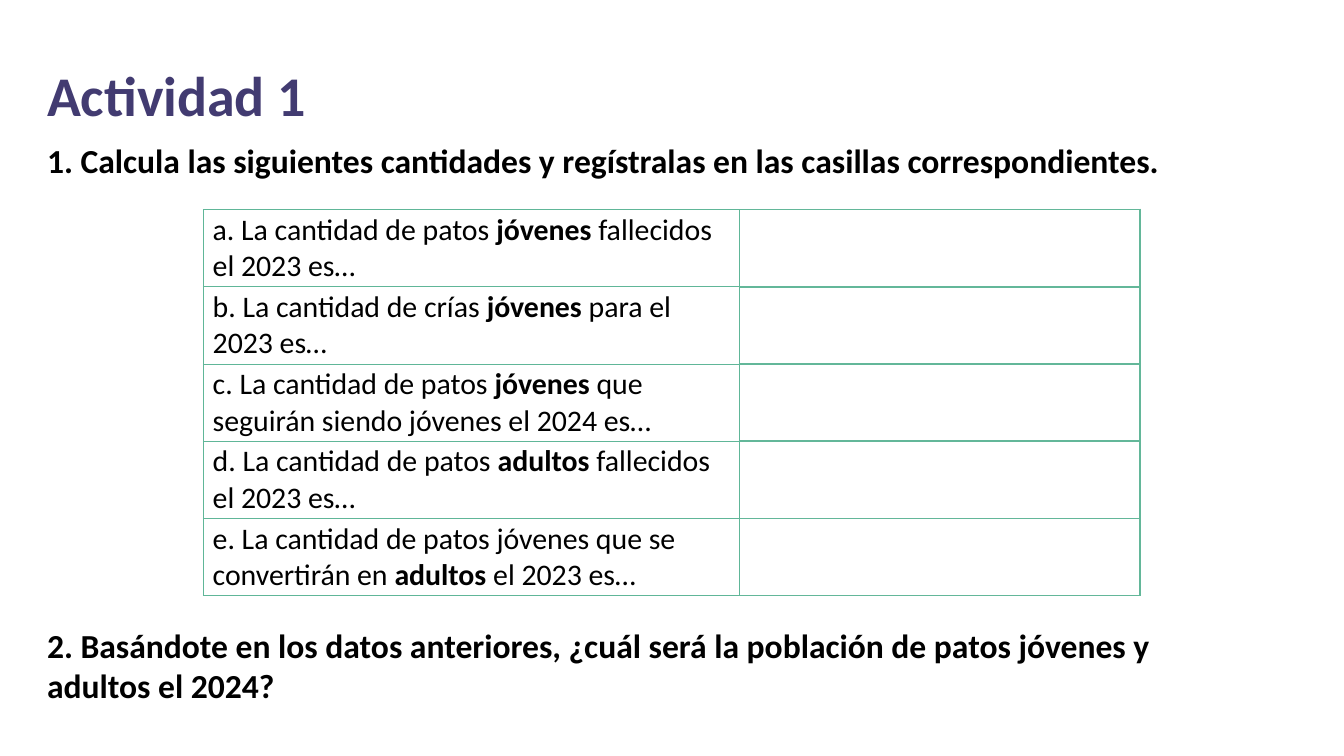
from typing import NamedTuple

from lxml import etree
from pptx import Presentation
from pptx import util as u
from pptx.dml.color import RGBColor
from pptx.enum import text
from pptx.oxml.ns import qn

FONT = "Calibri"
BLACK = RGBColor(0x00, 0x00, 0x00)
PURPLE = RGBColor(0x42, 0x3B, 0x71)
GREEN = RGBColor(0x60, 0xB6, 0x98)
ANSWER_GREEN = RGBColor(0x63, 0xB7, 0x99)

LEFT = u.Cm(0.64)
INSET = u.Cm(0.25)
CELL_INSET = u.Cm(0.18)
COLUMN_WIDTHS = (u.Cm(10.13), u.Cm(7.57))
ROW_HEIGHT = u.Cm(1.46)


class Question(NamedTuple):
    start: str
    emphasis: str
    end: str


class Instruction(NamedTuple):
    wording: str
    top: u.Length
    width: u.Length
    height: u.Length


class Border(NamedTuple):
    side: str
    color: RGBColor
    width: u.Length


QUESTIONS = (
    Question("a. La cantidad de patos ", "jóvenes ", "fallecidos el 2023 es…"),
    Question("b. La cantidad de crías ", "jóvenes ", "para el 2023 es…"),
    Question("c. La cantidad de patos ", "jóvenes ", "que seguirán siendo jóvenes el 2024 es…"),
    Question("d. La cantidad de patos ", "adultos ", "fallecidos el 2023 es…"),
    Question("e. La cantidad de patos jóvenes que se convertirán en ", "adultos ", "el 2023 es…"),
)
INSTRUCTIONS = (
    Instruction(
        "1. Calcula las siguientes cantidades y regístralas en las casillas correspondientes.",
        u.Cm(2.39), u.Cm(21.62), u.Cm(1.27),
    ),
    Instruction(
        "2. Basándote en los datos anteriores, ¿cuál será la población de patos jóvenes "
        "y adultos el 2024?",
        u.Cm(11.56), u.Cm(22.68), u.Cm(2.06),
    ),
)
# Sides follow the order that the cell properties require.
QUESTION_BORDERS = tuple(Border(side, GREEN, u.Pt(0.5)) for side in "LRTB")
ANSWER_BORDERS = (Border("L", GREEN, u.Pt(0.5)),) + tuple(
    Border(side, ANSWER_GREEN, u.Pt(1)) for side in "RTB"
)


def add_run(paragraph, wording: str, size: float, color: RGBColor, bold: bool) -> None:
    run = paragraph.add_run()
    run.text = wording
    run.font.name = FONT
    run.font.size = u.Pt(size)
    run.font.bold = bold
    run.font.color.rgb = color


def prepare_frame(frame) -> None:
    """Apply the insets, wrapping and alignment shared by all text outside the table."""
    frame.margin_left = frame.margin_right = INSET
    frame.margin_top = frame.margin_bottom = INSET
    frame.word_wrap = True
    frame.auto_size = text.MSO_AUTO_SIZE.SHAPE_TO_FIT_TEXT
    frame.vertical_anchor = text.MSO_ANCHOR.TOP
    frame.paragraphs[0].alignment = text.PP_ALIGN.LEFT


def add_title(slide) -> None:
    title = slide.shapes.title
    title.left, title.top = LEFT, u.Cm(0.89)
    title.width, title.height = u.Cm(8.33), u.Cm(1.8)
    prepare_frame(title.text_frame)
    add_run(title.text_frame.paragraphs[0], "Actividad 1", 30, PURPLE, True)


def add_instruction(slide, instruction: Instruction) -> None:
    box = slide.shapes.add_textbox(LEFT, instruction.top, instruction.width, instruction.height)
    prepare_frame(box.text_frame)
    add_run(box.text_frame.paragraphs[0], instruction.wording, 18, BLACK, True)


def format_cell(cell, borders: tuple[Border, ...]) -> None:
    properties = cell._tc.get_or_add_tcPr()
    for border in borders:
        line = etree.SubElement(properties, qn(f"a:ln{border.side}"), w=str(border.width))
        fill = etree.SubElement(line, qn("a:solidFill"))
        etree.SubElement(fill, qn("a:srgbClr"), val=str(border.color))
    cell.fill.background()
    cell.margin_left = cell.margin_right = CELL_INSET
    cell.margin_top = cell.margin_bottom = 0
    cell.vertical_anchor = text.MSO_ANCHOR.MIDDLE


def add_question_table(slide) -> None:
    frame = slide.shapes.add_table(
        len(QUESTIONS), len(COLUMN_WIDTHS), u.Cm(3.84), u.Cm(3.96),
        sum(COLUMN_WIDTHS), ROW_HEIGHT * len(QUESTIONS),
    )
    table = frame.table
    table.first_row = table.horz_banding = False
    for column, width in zip(table.columns, COLUMN_WIDTHS):
        column.width = width
    for row, question in zip(table.rows, QUESTIONS):
        row.height = ROW_HEIGHT
        question_cell, answer_cell = row.cells
        format_cell(question_cell, QUESTION_BORDERS)
        format_cell(answer_cell, ANSWER_BORDERS)
        paragraph = question_cell.text_frame.paragraphs[0]
        add_run(paragraph, question.start, 16, BLACK, False)
        add_run(paragraph, question.emphasis, 16, BLACK, True)
        add_run(paragraph, question.end, 16, BLACK, False)


def main() -> None:
    presentation = Presentation()
    presentation.slide_width = u.Cm(25.4)
    presentation.slide_height = u.Cm(14.29)
    title_only = presentation.slide_layouts.get_by_name("Title Only")
    slide = presentation.slides.add_slide(title_only)
    add_question_table(slide)
    add_title(slide)
    for instruction in INSTRUCTIONS:
        add_instruction(slide, instruction)
    presentation.save("out.pptx")


if __name__ == "__main__":
    main()
